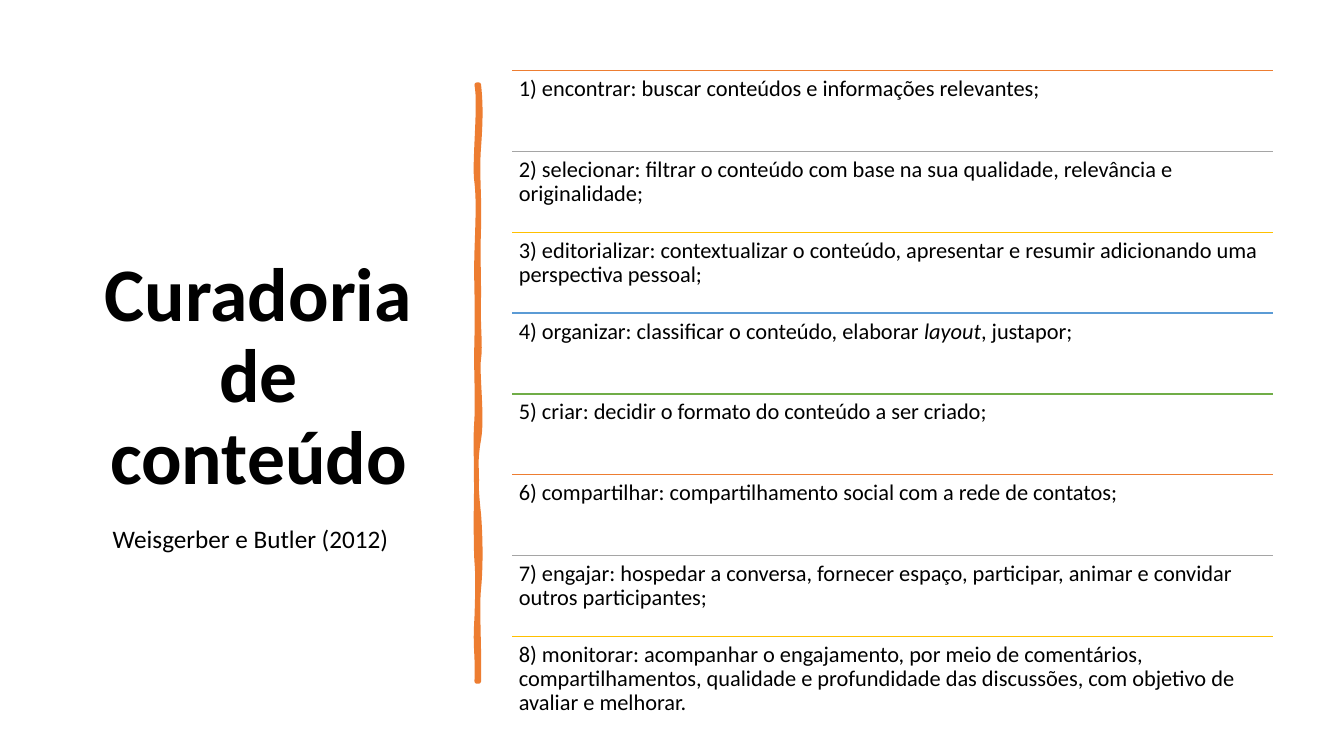
from copy import deepcopy

from lxml import etree
from pptx import Presentation
from pptx.dml.color import RGBColor
from pptx.enum import shapes, text
from pptx.oxml.ns import qn
from pptx.util import Pt

TITLE = "Curadoria de conteúdo"
AUTHORS = "Weisgerber e Butler (2012)"
# Each step is a list of runs; every second run is italic.
STEPS = [
    ["1) encontrar: buscar conteúdos e informações relevantes;"],
    ["2) selecionar: filtrar o conteúdo com base na sua qualidade, relevância e originalidade;"],
    ["3) editorializar: contextualizar o conteúdo, apresentar e resumir adicionando uma "
     "perspectiva pessoal;"],
    ["4) organizar: classificar o conteúdo, elaborar ", "layout", ", justapor;"],
    ["5) criar: decidir o formato do conteúdo a ser criado;"],
    ["6) compartilhar: compartilhamento social com a rede de contatos;"],
    ["7) engajar: hospedar a conversa, fornecer espaço, participar, animar e convidar "
     "outros participantes;"],
    ["8) monitorar: acompanhar o engajamento, por meio de comentários, compartilhamentos, "
     "qualidade e profundidade das discussões, com objetivo de avaliar e melhorar."],
]
ORANGE = "ED7D31"
RULE_COLORS = [ORANGE, "A5A5A5", "FFC000", "5B9BD5", "70AD47"]

# Brush stroke: Bezier points (start, then control, control, end) in units of 0.72 pt.
BRUSH_UNIT = Pt(0.72)
BRUSH_EDGE = [
    (475, 84), (477, 102), (477, 119), (475, 146), (473, 173), (476, 195), (475, 226),
    (474, 257), (475, 262), (475, 294), (474, 325), (477, 342), (475, 356),
    (473, 370), (479, 414), (475, 436), (471, 457), (472, 484), (475, 510),
    (477, 536), (477, 564), (475, 584), (473, 603), (476, 650), (475, 676),
    (474, 676), (473, 676), (473, 676), (474, 646), (471, 644), (473, 613),
    (474, 583), (474, 570), (473, 557), (472, 544), (472, 495), (473, 477),
    (473, 459), (471, 445), (473, 415), (474, 386), (472, 373), (473, 335),
    (474, 298), (472, 281), (473, 250), (474, 218), (475, 200), (473, 181),
    (470, 163), (477, 104), (473, 84), (474, 84), (474, 84), (475, 84),
]
BRUSH_BODY = [
    (475, 84), (475, 115), (472, 125), (475, 152), (477, 179), (474, 197), (475, 208),
    (476, 220), (474, 255), (475, 294), (476, 333), (473, 343), (475, 362),
    (477, 381), (477, 397), (475, 430), (472, 463), (475, 474), (475, 516),
    (475, 557), (474, 553), (475, 578), (476, 603), (474, 647), (475, 676),
    (474, 675), (473, 675), (473, 676), (470, 649), (474, 632), (473, 613),
    (472, 595), (475, 569), (473, 539), (471, 510), (476, 500), (473, 471),
    (470, 442), (477, 420), (473, 386), (469, 351), (474, 325), (473, 300),
    (471, 275), (471, 259), (473, 238), (474, 216), (474, 185), (473, 164),
    (471, 143), (475, 121), (473, 84), (474, 84), (474, 84), (475, 84),
]

LIST_LEFT, LIST_TOP, LIST_WIDTH, ROW_HEIGHT = 365.8, 50.5, 543.6, 57.72


def color(value):
    return RGBColor.from_string(value)


def add_text(page, runs, left, top, width, height, *, size, bold=False, inset=(7.2, 3.6),
             align=text.PP_ALIGN.LEFT, anchor=text.MSO_ANCHOR.TOP, spacing=1.0, after=0):
    frame = page.shapes.add_textbox(Pt(left), Pt(top), Pt(width), Pt(height)).text_frame
    frame.word_wrap = True
    frame.vertical_anchor = anchor
    frame.margin_left = frame.margin_right = Pt(inset[0])
    frame.margin_top = frame.margin_bottom = Pt(inset[1])
    para = frame.paragraphs[0]
    para.alignment, para.line_spacing, para.space_after = align, spacing, Pt(after)
    for index, words in enumerate(runs):
        span = para.add_run()
        span.text = words
        font = span.font
        font.name, font.size, font.bold = "Calibri", Pt(size), bold
        font.italic = index % 2 == 1
        font.color.rgb = color("000000")


def add_rule(page, left, top, width, line_color):
    rule = page.shapes.add_connector(shapes.MSO_CONNECTOR.STRAIGHT,
                                     Pt(left), Pt(top), Pt(left + width), Pt(top))
    rule.line.color.rgb, rule.line.width = color(line_color), Pt(1)
    etree.SubElement(rule._element.spPr, qn("a:effectLst"))


def bend(outline):
    """Turn every three straight segments of an outline into one cubic curve."""
    segments = outline.findall(qn("a:lnTo"))
    for first in range(0, len(segments), 3):
        curve = etree.Element(qn("a:cubicBezTo"))
        segments[first].addprevious(curve)
        for segment in segments[first:first + 3]:
            curve.append(segment[0])
            outline.remove(segment)


def add_brush(page):
    """Draw the stroke as one shape: a line-only edge and a fill-only body."""
    builder = page.shapes.build_freeform(*BRUSH_EDGE[0], scale=BRUSH_UNIT)
    builder.add_line_segments(BRUSH_EDGE[1:], close=True)
    builder.move_to(*BRUSH_BODY[0])
    builder.add_line_segments(BRUSH_BODY[1:], close=True)
    brush = builder.convert_to_shape()
    brush.shadow.inherit = False
    brush.fill.solid()
    brush.fill.fore_color.rgb = color(ORANGE)
    brush.line.color.rgb, brush.line.width = color(ORANGE), Pt(3.25)

    edge = next(brush._element.iter(qn("a:path")))
    body = deepcopy(edge)
    edge.addnext(body)
    edge_parts = len(BRUSH_EDGE) + 1
    for part in list(edge)[edge_parts:]:
        edge.remove(part)
    for part in list(body)[:edge_parts]:
        body.remove(part)
    edge.set("fill", "none")
    body.set("stroke", "0")
    bend(edge)
    bend(body)


def main():
    deck = Presentation()
    deck.slide_width, deck.slide_height = Pt(960), Pt(540)
    page = deck.slides.add_slide(deck.slide_layouts[6])
    add_text(page, [TITLE], 50, 50.2, 269.3, 440, size=54, bold=True, spacing=0.9,
             align=text.PP_ALIGN.CENTER, anchor=text.MSO_ANCHOR.MIDDLE)
    add_brush(page)
    add_text(page, [AUTHORS], 73.4, 370.4, 222.5, 29, size=18, after=6)
    for row, runs in enumerate(STEPS):
        top = LIST_TOP + row * ROW_HEIGHT
        add_rule(page, LIST_LEFT, top, LIST_WIDTH, RULE_COLORS[row % len(RULE_COLORS)])
        add_text(page, runs, LIST_LEFT, top, LIST_WIDTH, ROW_HEIGHT,
                 size=16, spacing=0.9, inset=(4.8, 4.8))
    deck.save("out.pptx")


if __name__ == "__main__":
    main()
